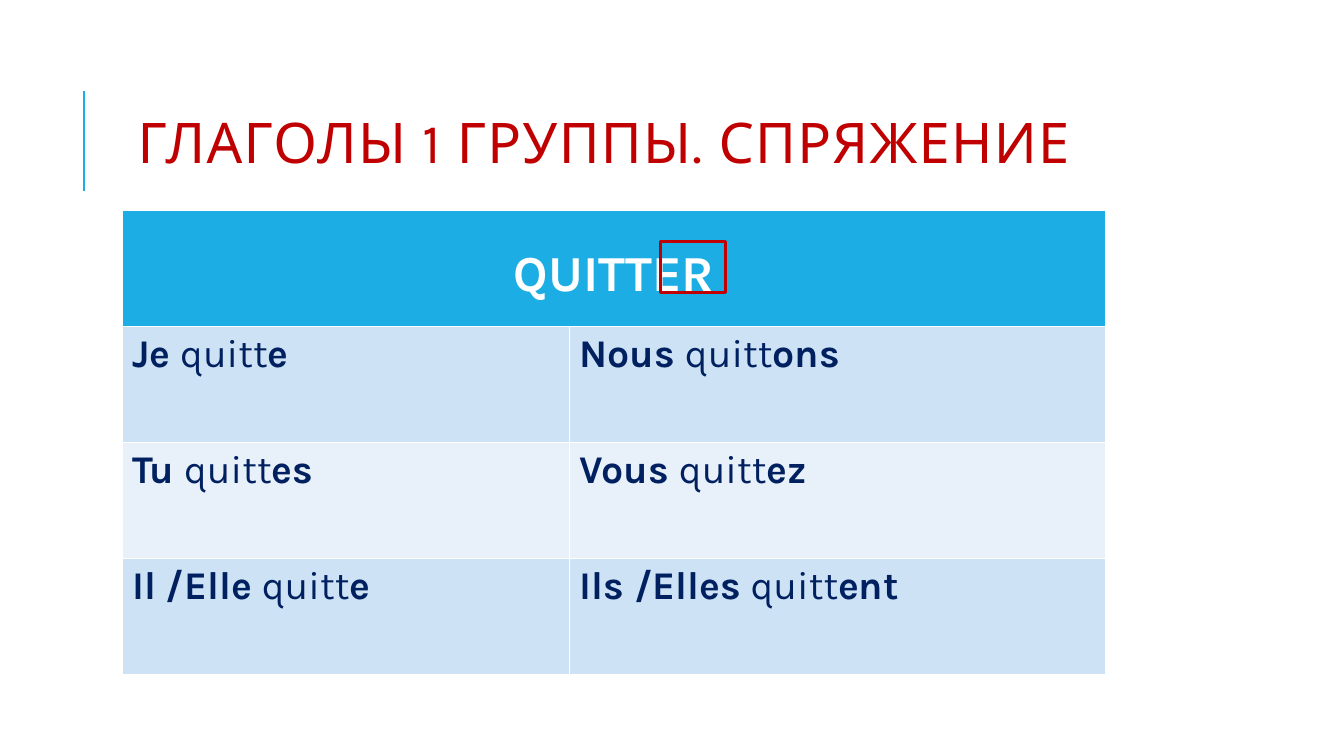
"""Build a slide with the conjugation table of a French first-group verb."""
from dataclasses import dataclass
from typing import NamedTuple

from lxml import etree
from pptx import Presentation
from pptx import util as u
from pptx.dml.color import RGBColor
from pptx.enum import shapes, text
from pptx.oxml import ns


@dataclass(frozen=True)
class Theme:
    font: str = "Karla"
    accent: str = "1CADE4"
    red: str = "C00000"
    navy: str = "002060"
    white: str = "FFFFFF"
    bands: tuple[str, str] = ("CDE3F5", "E8F1FA")
    title_size: int = 40
    verb_size: int = 36
    form_size: int = 28


class Frame(NamedTuple):
    """Place and size in hundredths of the slide's width and height."""
    left: float
    top: float
    width: float
    height: float


class Form(NamedTuple):
    """Pronoun and ending of one conjugated form."""
    pronoun: str
    ending: str


THEME = Theme()
WIDTH, HEIGHT = u.Inches(13.33), u.Inches(7.5)
STEM = "quitt"
FORMS = [
    (Form("Je ", "e"), Form("Nous ", "ons")),
    (Form("Tu ", "es"), Form("Vous ", "ez")),
    (Form("Il /Elle ", "e"), Form("Ils /Elles ", "ent")),
]
COLUMN_WIDTHS = (33.3, 39.9)
ROW_HEIGHT = 15.33
TITLE = Frame(8.4, 8.53, 79.74, 21.87)
TABLE = Frame(9.08, 27.87, sum(COLUMN_WIDTHS), ROW_HEIGHT * (len(FORMS) + 1))
ENDING_MARK = Frame(49.13, 32, 4.88, 6.67)
RULE = Frame(6.23, 12, 0, 13.33)


def across(share: float) -> int:
    """Turn hundredths of the width into a length."""
    return round(WIDTH * share / 100)


def down(share: float) -> int:
    """Turn hundredths of the height into a length."""
    return round(HEIGHT * share / 100)


def place(frame: Frame) -> tuple[int, int, int, int]:
    """Turn a frame into lengths."""
    return across(frame.left), down(frame.top), across(frame.width), down(frame.height)


def style(span, size: int, color: str, bold: bool) -> None:
    """Format one run."""
    span.font.name = THEME.font
    span.font.size = u.Pt(size)
    span.font.bold = bold
    span.font.color.rgb = RGBColor.from_string(color)


def fill(cell, color: str) -> None:
    """Give a cell a plain fill."""
    cell.fill.solid()
    cell.fill.fore_color.rgb = RGBColor.from_string(color)


def draw_rule(page) -> None:
    """Draw the upright line beside the title."""
    x = across(RULE.left)
    rule = page.shapes.add_connector(
        shapes.MSO_CONNECTOR.STRAIGHT, x, down(RULE.top + RULE.height), x, down(RULE.top))
    rule.line.color.rgb = RGBColor.from_string(THEME.accent)
    rule.line.width = u.Pt(1.5)
    etree.SubElement(rule._element.spPr, ns.qn("a:effectLst"))


def draw_title(page) -> None:
    """Place and format the title."""
    title = page.shapes.title
    title.left, title.top, title.width, title.height = place(TITLE)
    frame = title.text_frame
    frame.text = " ГЛАГОЛЫ 1 ГРУППЫ. СПРЯЖЕНИЕ"
    frame.word_wrap = True
    frame.auto_size = text.MSO_AUTO_SIZE.NONE
    frame.vertical_anchor = text.MSO_ANCHOR.MIDDLE
    para = frame.paragraphs[0]
    para.alignment = text.PP_ALIGN.LEFT
    para.line_spacing = 0.8
    span = para.runs[0]
    style(span, THEME.title_size, THEME.red, False)
    span.font._element.set("spc", "100")


def write_form(cell, form: Form) -> None:
    """Write a form with its pronoun and ending in bold."""
    para = cell.text_frame.paragraphs[0]
    for words, bold in ((form.pronoun, True), (STEM, False), (form.ending, True)):
        span = para.add_run()
        span.text = words
        style(span, THEME.form_size, THEME.navy, bold)


def draw_table(page) -> None:
    """Draw the verb heading and its forms."""
    table = page.shapes.add_table(
        len(FORMS) + 1, len(COLUMN_WIDTHS), *place(TABLE)).table
    for column, width in zip(table.columns, COLUMN_WIDTHS):
        column.width = across(width)
    for row in table.rows:
        row.height = down(ROW_HEIGHT)
    heading = table.cell(0, 0)
    heading.merge(table.cell(0, len(COLUMN_WIDTHS) - 1))
    fill(heading, THEME.accent)
    para = heading.text_frame.paragraphs[0]
    para.text = "QUITTER"
    para.alignment = text.PP_ALIGN.CENTER
    para.line_spacing = 1.5
    style(para.runs[0], THEME.verb_size, THEME.white, True)
    for row, forms in enumerate(FORMS):
        for column, form in enumerate(forms):
            cell = table.cell(row + 1, column)
            fill(cell, THEME.bands[row % 2])
            write_form(cell, form)


def draw_ending_mark(page) -> None:
    """Frame the ending of the infinitive."""
    box = page.shapes.add_shape(shapes.MSO_SHAPE.RECTANGLE, *place(ENDING_MARK))
    box.shadow.inherit = False
    box.fill.background()
    box.line.color.rgb = RGBColor.from_string(THEME.red)
    box.line.width = u.Pt(2.25)


def main() -> None:
    """Build and save the deck."""
    deck = Presentation()
    deck.slide_width, deck.slide_height = WIDTH, HEIGHT
    page = deck.slides.add_slide(deck.slide_layouts.get_by_name("Title Only"))
    draw_rule(page)
    draw_title(page)
    draw_table(page)
    draw_ending_mark(page)
    deck.save("out.pptx")


if __name__ == "__main__":
    main()
